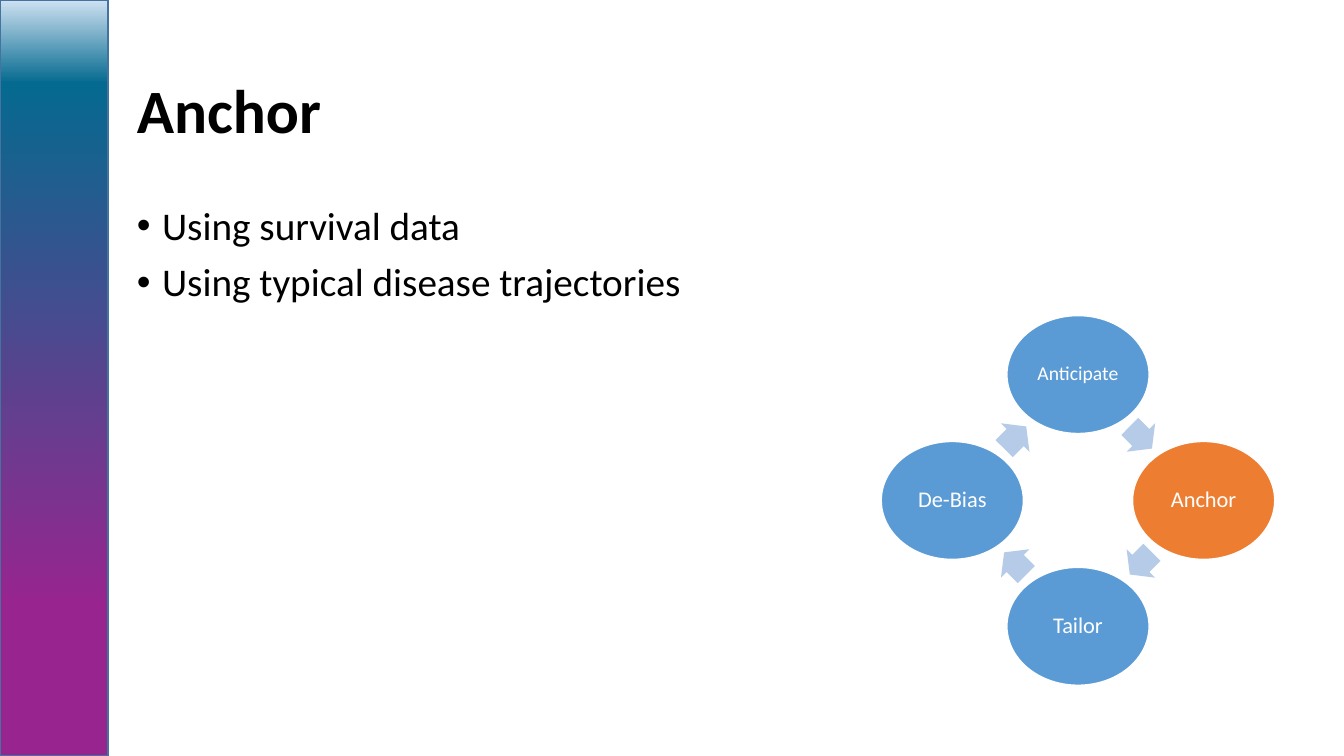
from copy import deepcopy
from dataclasses import dataclass
from math import cos, radians, sin

from pptx import Presentation
from pptx.dml.color import RGBColor
from pptx.enum.shapes import MSO_SHAPE as Shape
from pptx.enum.text import MSO_ANCHOR as Anchor, PP_ALIGN as Align
from pptx.oxml.ns import qn
from pptx.oxml.xmlchemy import OxmlElement
from pptx.util import Inches, Pt


@dataclass(frozen=True)
class Theme:
    font: str = "Calibri"
    text: str = "000000"
    light: str = "FFFFFF"
    node: str = "5B9BD5"
    active: str = "ED7D31"
    arrow: str = "B5CBE7"
    bar_line: str = "43739E"
    bar_stops: tuple = ((0.2, "98258F"), (0.89, "056A8F"), (1, "CEE1F2"))
    title_size: int = 44
    body_size: int = 28
    node_size: int = 16
    small_node_size: int = 14


class SlideBuilder:
    """Draws on one slide; every length is a percentage of the slide's size."""

    def __init__(self, presentation, theme):
        self.theme = theme
        self.width = presentation.slide_width
        self.height = presentation.slide_height
        self.slide = presentation.slides.add_slide(presentation.slide_layouts[6])

    def box(self, left, top, width, height):
        return (round(left * self.width / 100), round(top * self.height / 100),
                round(width * self.width / 100), round(height * self.height / 100))

    def shape(self, kind, box, fill=None, line=None):
        shape = self.slide.shapes.add_shape(kind, *self.box(*box))
        shape.shadow.inherit = False
        if fill:
            shape.fill.solid()
            shape.fill.fore_color.rgb = RGBColor.from_string(fill)
        if line:
            shape.line.color.rgb = RGBColor.from_string(line)
            shape.line.width = Pt(1)
        else:
            shape.line.fill.background()
        return shape

    def gradient_bar(self, box):
        bar = self.shape(Shape.RECTANGLE, box, line=self.theme.bar_line)
        bar.fill.gradient()
        bar.fill.gradient_angle = 90
        stop_list = bar.element.spPr.find(qn("a:gradFill")).find(qn("a:gsLst"))
        stop_list.append(deepcopy(stop_list[0]))
        for stop, (position, color) in zip(bar.fill.gradient_stops, self.theme.bar_stops):
            stop.position = position
            stop.color.rgb = RGBColor.from_string(color)

    def add_text(self, paragraph, text, size, color, bold=False):
        paragraph.line_spacing = 0.9
        run = paragraph.add_run()
        run.text = text
        run.font.name = self.theme.font
        run.font.size = Pt(size)
        run.font.bold = bold
        run.font.color.rgb = RGBColor.from_string(color)

    def text_frame(self, box, anchor):
        frame = self.slide.shapes.add_textbox(*self.box(*box)).text_frame
        frame.word_wrap = True
        frame.vertical_anchor = anchor
        return frame

    def title(self, text, box):
        frame = self.text_frame(box, Anchor.MIDDLE)
        self.add_text(frame.paragraphs[0], text, self.theme.title_size, self.theme.text, True)

    def bullets(self, lines, box):
        frame = self.text_frame(box, Anchor.TOP)
        for index, line in enumerate(lines):
            paragraph = frame.add_paragraph() if index else frame.paragraphs[0]
            properties = paragraph._p.get_or_add_pPr()
            properties.set("marL", str(Inches(0.25)))
            properties.set("indent", str(-Inches(0.25)))
            for tag, name, value in (("a:buFont", "typeface", "Arial"),
                                     ("a:buChar", "char", "•")):
                element = OxmlElement(tag)
                element.set(name, value)
                properties.append(element)
            if index:
                paragraph.space_before = Pt(10)
            self.add_text(paragraph, line, self.theme.body_size, self.theme.text)

    def node(self, text, box, fill, size):
        frame = self.shape(Shape.OVAL, box, fill, self.theme.light).text_frame
        frame.word_wrap = True
        frame.vertical_anchor = Anchor.MIDDLE
        frame.margin_left = frame.margin_right = Inches(0.02)
        frame.margin_top = frame.margin_bottom = Inches(0.02)
        frame.paragraphs[0].alignment = Align.CENTER
        self.add_text(frame.paragraphs[0], text, size, self.theme.light)

    def arrow(self, box, rotation):
        arrow = self.shape(Shape.RIGHT_ARROW, box, self.theme.arrow)
        arrow.adjustments[0], arrow.adjustments[1] = 0.6, 0.5
        arrow.rotation = rotation

    def cycle(self, steps, center, radius, node_size, arrow_size):
        """Places (text, fill, size) steps clockwise from the top, an arrow after each."""
        def box_at(angle, size, reach):
            x = center[0] + reach * radius[0] * sin(radians(angle))
            y = center[1] - reach * radius[1] * cos(radians(angle))
            return x - size[0] / 2, y - size[1] / 2, *size

        turn = 360 / len(steps)
        midway = cos(radians(turn / 2))
        for index, (text, fill, size) in enumerate(steps):
            angle = index * turn
            self.node(text, box_at(angle, node_size, 1), fill, size)
            self.arrow(box_at(angle + turn / 2, arrow_size, midway), angle + turn / 2)


def main():
    presentation = Presentation()
    presentation.slide_width = Inches(13.33)
    presentation.slide_height = Inches(7.5)
    theme = Theme()
    builder = SlideBuilder(presentation, theme)

    builder.gradient_bar((0, 0, 8.03, 100))
    builder.title("Anchor", (9.45, 5.33, 87.3, 19.33))
    builder.bullets(["Using survival data", "Using typical disease trajectories"],
                    (9.45, 26.67, 87.4, 71.2))
    builder.cycle(
        [("Anticipate", theme.node, theme.small_node_size),
         ("Anchor", theme.active, theme.node_size),
         ("Tailor", theme.node, theme.node_size),
         ("De-Bias", theme.node, theme.node_size)],
        center=(80.21, 66.2), radius=(9.35, 16.65),
        node_size=(10.58, 15.6), arrow_size=(2.33, 5.33))

    presentation.save("out.pptx")


if __name__ == "__main__":
    main()
